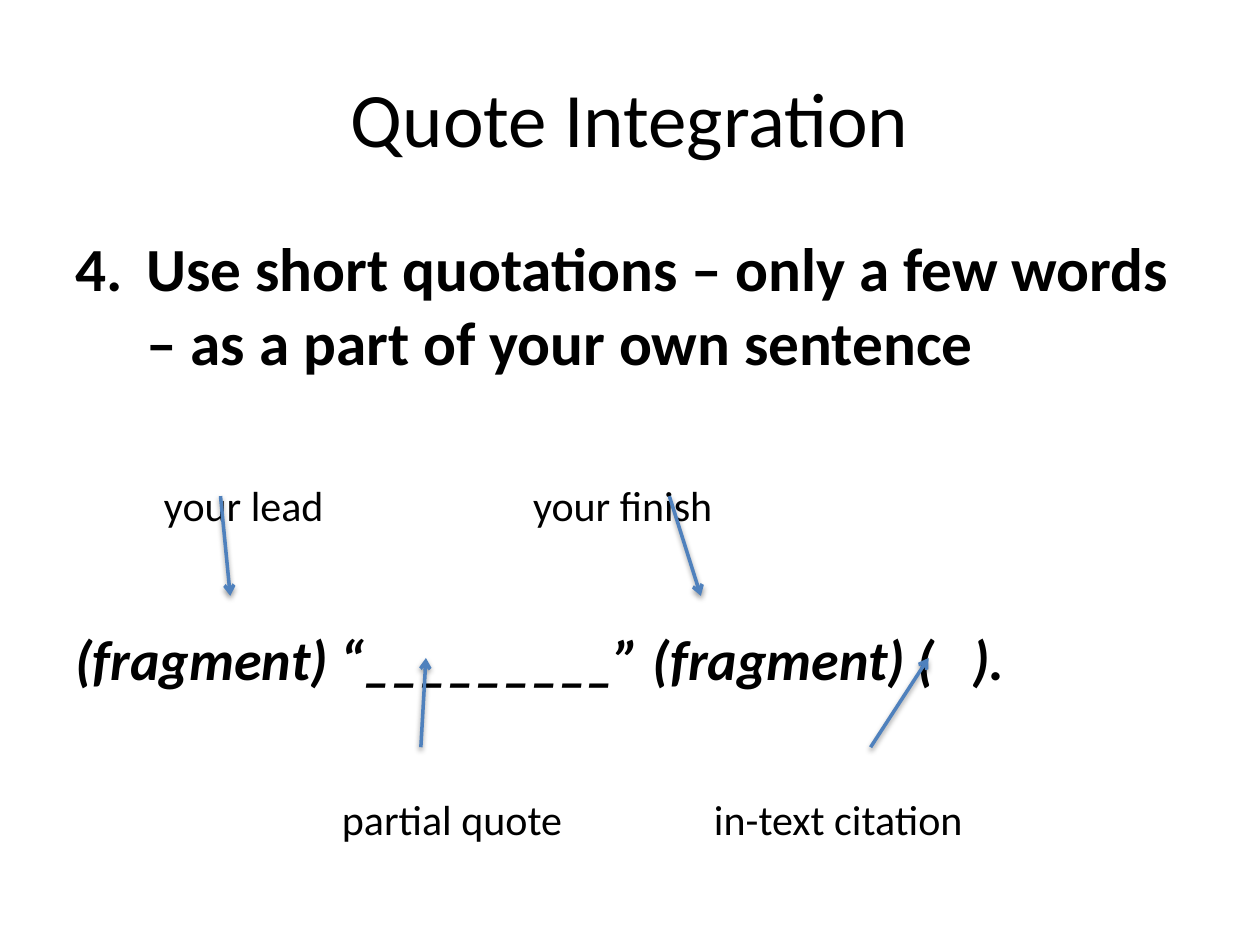
"""Build the Quote Integration slide."""
from dataclasses import dataclass

from pptx import Presentation
from pptx.dml.color import RGBColor
from pptx.enum.shapes import MSO_CONNECTOR as Connector
from pptx.enum.text import MSO_ANCHOR as Anchor, PP_ALIGN as Align
from pptx.oxml import parse_xml
from pptx.oxml.ns import nsdecls
from pptx.slide import Slide
from pptx.text.text import _Paragraph as Paragraph
from pptx.util import Pt

BLACK = RGBColor(0x00, 0x00, 0x00)
BLUE = RGBColor(0x4F, 0x81, 0xBD)
FONT = "Calibri"
LEFT = 43.2
HANGING = 40.5
UPPER_ROW, LOWER_ROW = 273.8, 453.2


@dataclass(frozen=True)
class Text:
    words: str
    left: float
    top: float
    width: float
    height: float
    size: float = 24
    bold: bool = False
    italic: bool = False


@dataclass(frozen=True)
class Arrow:
    start: tuple[float, float]
    end: tuple[float, float]


HEADING = Text("Use short quotations – only a few words – as a part of your own sentence",
               LEFT, 128.2 + 3.6, 633.6, 86, size=35, bold=True)
PATTERN = Text("(fragment) “_________” (fragment) (\t).",
               LEFT, 357, 633.6, 39, size=32, bold=True, italic=True)
LABELS = [
    Text("your lead", 93.7, UPPER_ROW, 120, 30),
    Text("your finish", 304.6, UPPER_ROW, 130, 30),
    Text("partial quote", 195.4, LOWER_ROW, 150, 30),
    Text("in-text citation", 408, LOWER_ROW, 170, 30),
]
ARROWS = [
    Arrow((126, 283.5), (131.6, 340.5)),
    Arrow((382.5, 283.5), (400.5, 340.5)),
    Arrow((240.5, 427), (243.4, 376)),
    Arrow((497.5, 427), (530.6, 376)),
]


def apply(target: object, values: dict) -> None:
    for name, value in values.items():
        setattr(target, name, value)


def write(para: Paragraph, words: str, size: float,
          bold: bool = False, italic: bool = False) -> None:
    span = para.add_run()
    span.text = words
    apply(span.font, {"name": FONT, "size": Pt(size), "bold": bold, "italic": italic})
    span.font.color.rgb = BLACK


def add_title(page: Slide, words: str) -> None:
    title = page.shapes.title
    apply(title, {"left": Pt(36), "top": Pt(21.6), "width": Pt(648), "height": Pt(90)})
    apply(title.text_frame, {"vertical_anchor": Anchor.MIDDLE, "word_wrap": True})
    para = title.text_frame.paragraphs[0]
    para.alignment = Align.CENTER
    write(para, words, 44)


def add_text(page: Slide, text: Text) -> Paragraph:
    box = page.shapes.add_textbox(Pt(text.left), Pt(text.top), Pt(text.width), Pt(text.height))
    margins = {f"margin_{side}": 0 for side in ("left", "top", "right", "bottom")}
    apply(box.text_frame, {"word_wrap": True, **margins})
    para = box.text_frame.paragraphs[0]
    write(para, text.words, text.size, text.bold, text.italic)
    return para


def add_number(para: Paragraph, number: int) -> None:
    properties = para._p.get_or_add_pPr()
    properties.set("marL", str(Pt(HANGING)))
    properties.set("indent", str(-Pt(HANGING)))
    properties.append(parse_xml(
        f'<a:buAutoNum {nsdecls("a")} type="arabicPeriod" startAt="{number}"/>'))


def add_tab(para: Paragraph, position: float) -> None:
    para._p.get_or_add_pPr().append(parse_xml(
        f'<a:tabLst {nsdecls("a")}><a:tab pos="{Pt(position)}" algn="l"/></a:tabLst>'))


def add_arrow(page: Slide, arrow: Arrow) -> None:
    ends = [Pt(value) for value in arrow.start + arrow.end]
    line = page.shapes.add_connector(Connector.STRAIGHT, *ends)
    line.line.color.rgb = BLUE
    line.line.width = Pt(2)
    line.line._get_or_add_ln().append(parse_xml(f'<a:tailEnd {nsdecls("a")} type="arrow"/>'))
    line._element.spPr.append(parse_xml(
        f'<a:effectLst {nsdecls("a")}>'
        f'<a:outerShdw blurRad="{Pt(3.1)}" dist="{Pt(1.6)}" dir="5400000" rotWithShape="0">'
        f'<a:srgbClr val="{BLACK}"><a:alpha val="38000"/></a:srgbClr>'
        '</a:outerShdw></a:effectLst>'))


def main() -> None:
    deck = Presentation()
    apply(deck, {"slide_width": Pt(720), "slide_height": Pt(540)})
    page = deck.slides.add_slide(deck.slide_layouts[5])
    add_title(page, "Quote Integration")
    add_number(add_text(page, HEADING), 4)
    add_tab(add_text(page, PATTERN), 512.5)
    for label in LABELS:
        add_text(page, label)
    for arrow in ARROWS:
        add_arrow(page, arrow)
    deck.save("out.pptx")


if __name__ == "__main__":
    main()
